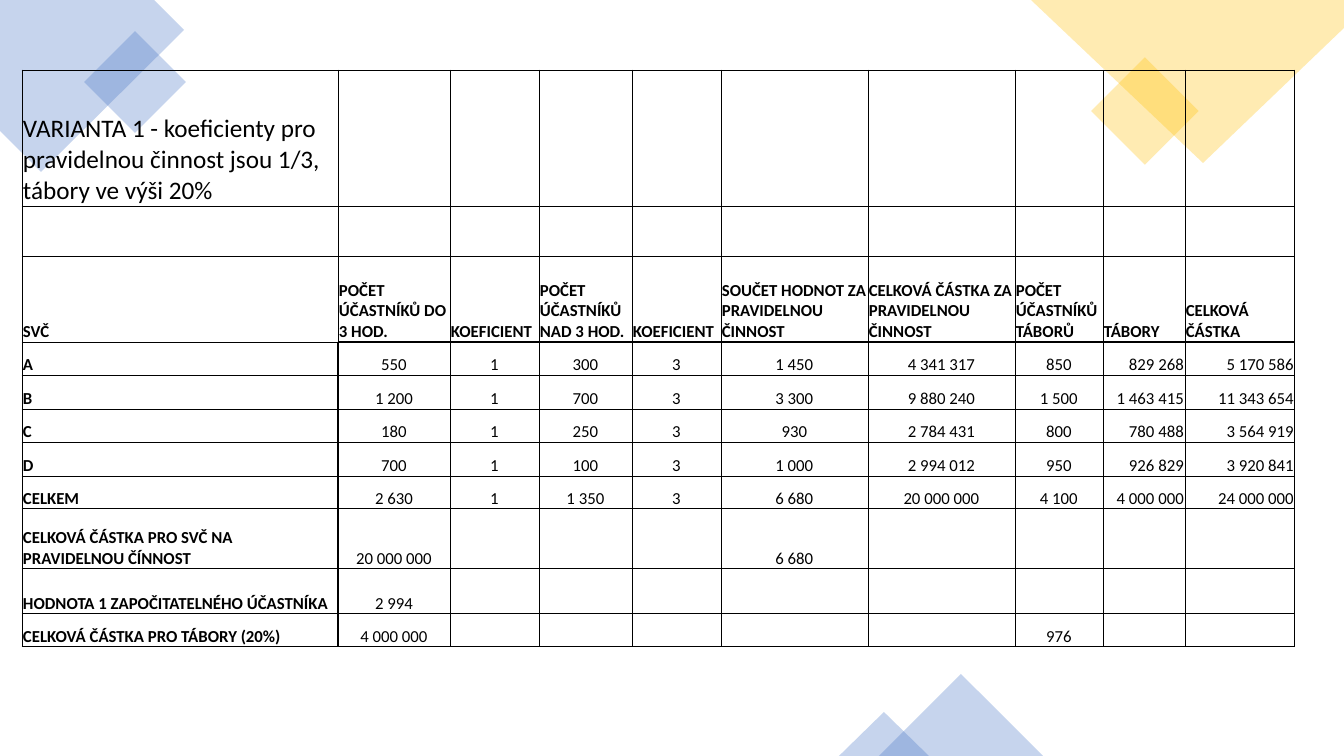
from dataclasses import dataclass

from lxml.etree import SubElement
from pptx import Presentation
from pptx.dml.color import RGBColor
from pptx.enum.shapes import MSO_SHAPE as Shape
from pptx.enum.text import MSO_ANCHOR as Anchor, PP_ALIGN as Align
from pptx.oxml.ns import qn
from pptx.util import Pt

PX = 914400 / 100.8


@dataclass(frozen=True)
class Theme:
    blue: str = "4472C4"
    gold: str = "FFC000"
    ink: str = "000000"
    alpha: int = 30
    font: str = "Calibri"
    title: int = 18
    body: int = 12
    thin: float = 0.5
    thick: float = 1


THEME = Theme()

# colour, corner points
CORNERS = [
    (THEME.blue, [(154, 0), (0, 0), (0, 131), (41, 172), (184, 30)]),
    (THEME.gold, [(1344, 0), (1031, 0), (1203, 163), (1344, 28)]),
]
# preset, colour, left, top, width, height, rotation
SHAPES = [
    (Shape.RECTANGLE, THEME.blue, 99, 46, 72, 72, 315),
    (Shape.RECTANGLE, THEME.gold, 1107, 73, 76, 76, 315),
    (Shape.ISOSCELES_TRIANGLE, THEME.blue, 879, 674, 164, 82, 0),
    (Shape.ISOSCELES_TRIANGLE, THEME.blue, 839, 712, 90, 44, 0),
]

LEFT, TOP = 22, 70
WIDTHS = [316, 112, 89, 93, 89, 147, 147, 88, 82, 110]
HEIGHTS = [136, 50, 86, 33, 34, 33, 34, 33, 60, 45, 33]
HEAD = 2  # row of column headings
MONEY = 8  # first right-aligned column
ROWS = [
    ["VARIANTA 1 - koeficienty pro pravidelnou činnost jsou 1/3, tábory ve výši 20%"],
    [],
    ["SVČ", "POČET ÚČASTNÍKŮ DO 3 HOD.", "KOEFICIENT", "POČET ÚČASTNÍKŮ NAD 3 HOD.",
     "KOEFICIENT", "SOUČET HODNOT ZA PRAVIDELNOU ČINNOST",
     "CELKOVÁ ČÁSTKA ZA PRAVIDELNOU ČINNOST", "POČET ÚČASTNÍKŮ TÁBORŮ",
     "TÁBORY", "CELKOVÁ ČÁSTKA"],
    ["A", "550", "1", "300", "3", "1 450", "4 341 317", "850", "829 268", "5 170 586"],
    ["B", "1 200", "1", "700", "3", "3 300", "9 880 240", "1 500", "1 463 415", "11 343 654"],
    ["C", "180", "1", "250", "3", "930", "2 784 431", "800", "780 488", "3 564 919"],
    ["D", "700", "1", "100", "3", "1 000", "2 994 012", "950", "926 829", "3 920 841"],
    ["CELKEM", "2 630", "1", "1 350", "3", "6 680", "20 000 000", "4 100", "4 000 000",
     "24 000 000"],
    ["CELKOVÁ ČÁSTKA PRO SVČ NA PRAVIDELNOU ČÍNNOST", "20 000 000", "", "", "", "6 680"],
    ["HODNOTA 1 ZAPOČITATELNÉHO ÚČASTNÍKA", "2 994"],
    ["CELKOVÁ ČÁSTKA PRO TÁBORY (20%)", "4 000 000", "", "", "", "", "", "976"],
]


def px(*vals):
    return [round(v * PX) for v in vals]


def tint(shape, color):
    """Give a shape a see-through fill, no line and no shadow."""
    shape.shadow.inherit = False
    shape.line.fill.background()
    shape.fill.solid()
    shape.fill.fore_color.rgb = RGBColor.from_string(color)
    clr = shape.fill._xPr.find(qn("a:solidFill"))[0]
    SubElement(clr, qn("a:alpha"), val=str(THEME.alpha * 1000))


def decorate(slide):
    for color, points in CORNERS:
        start, *rest = points
        pen = slide.shapes.build_freeform(*start, scale=PX)
        pen.add_line_segments(rest, close=True)
        tint(pen.convert_to_shape(), color)
    for kind, color, *box, turn in SHAPES:
        shape = slide.shapes.add_shape(kind, *px(*box))
        shape.rotation = turn
        tint(shape, color)


def rule(cell, row, col):
    """Draw thin borders, with a thick frame around the block of figures."""
    inner, below = col > 0, row > HEAD
    heavy = {
        "L": below and col == 1,
        "R": below and col in (0, len(WIDTHS) - 1),
        "T": inner and row == HEAD + 1,
        "B": inner and row in (HEAD, len(ROWS) - 1),
    }
    props = cell._tc.get_or_add_tcPr()
    for side, bold in heavy.items():
        size = THEME.thick if bold else THEME.thin
        line = SubElement(props, qn(f"a:ln{side}"), w=str(Pt(size)))
        fill = SubElement(line, qn("a:solidFill"))
        SubElement(fill, qn("a:srgbClr"), val=THEME.ink)


def write(cell, text, row, col):
    para = cell.text_frame.paragraphs[0]
    para.text = text
    if row > HEAD and col > 0:
        para.alignment = Align.RIGHT if col >= MONEY else Align.CENTER
    else:
        para.alignment = Align.LEFT
    font = para.runs[0].font
    font.name = THEME.font
    font.size = Pt(THEME.title if row == 0 else THEME.body)
    font.bold = row == HEAD or (row > HEAD and col == 0)
    font.color.rgb = RGBColor.from_string(THEME.ink)


def tabulate(slide):
    box = px(LEFT, TOP, sum(WIDTHS), sum(HEIGHTS))
    table = slide.shapes.add_table(len(ROWS), len(WIDTHS), *box).table
    table.first_row = table.horz_banding = False
    for col, width in zip(table.columns, px(*WIDTHS)):
        col.width = width
    for r, (texts, height) in enumerate(zip(ROWS, px(*HEIGHTS))):
        table.rows[r].height = height
        for c in range(len(WIDTHS)):
            cell = table.cell(r, c)
            cell.vertical_anchor = Anchor.BOTTOM
            cell.margin_left = cell.margin_right = cell.margin_top = px(1)[0]
            cell.margin_bottom = 0
            rule(cell, r, c)
            cell.fill.background()
            if c < len(texts) and texts[c]:
                write(cell, texts[c], r, c)


def main():
    deck = Presentation()
    deck.slide_width, deck.slide_height = px(1344, 756)
    slide = deck.slides.add_slide(deck.slide_layouts[6])
    decorate(slide)
    tabulate(slide)
    deck.save("out.pptx")


if __name__ == "__main__":
    main()
